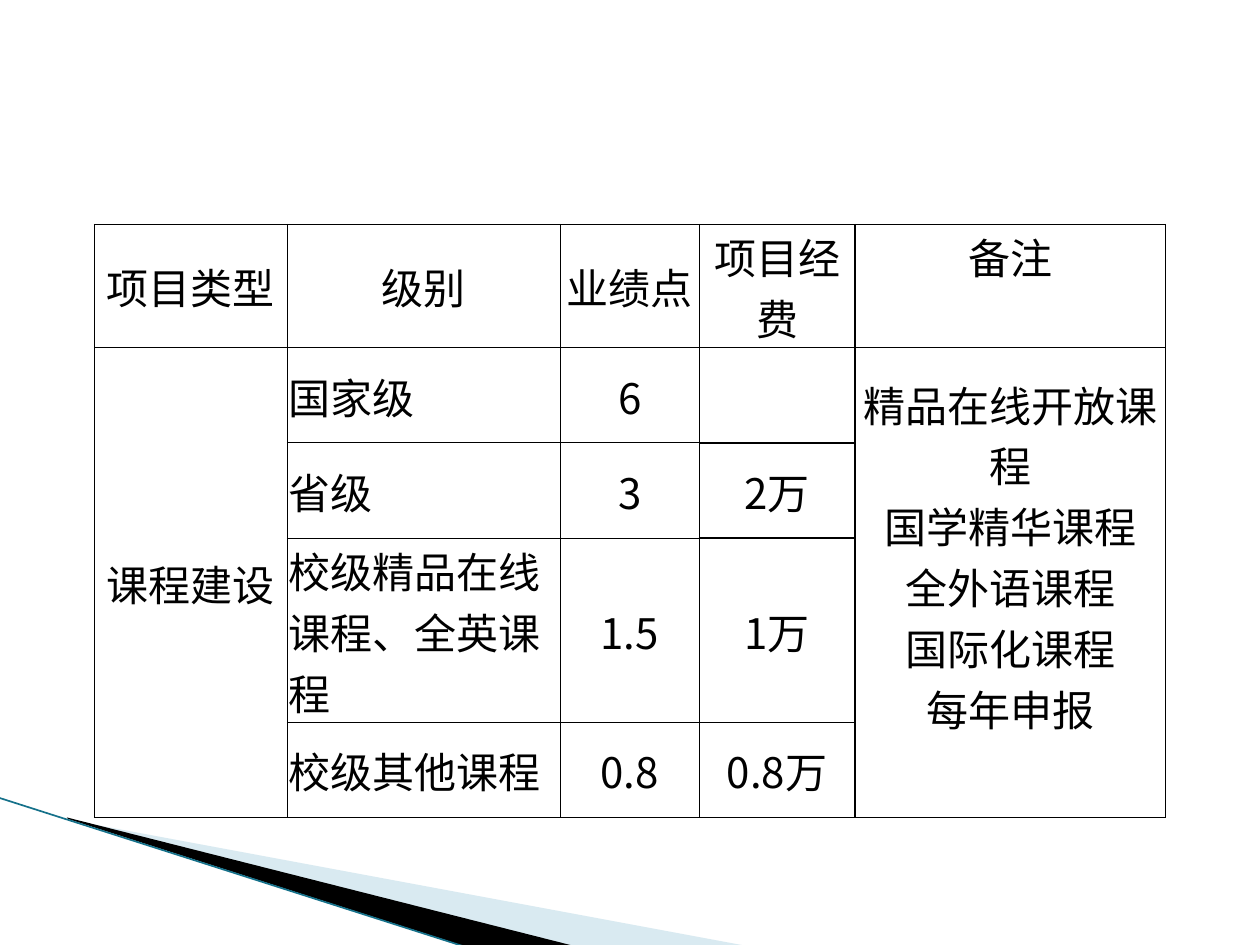
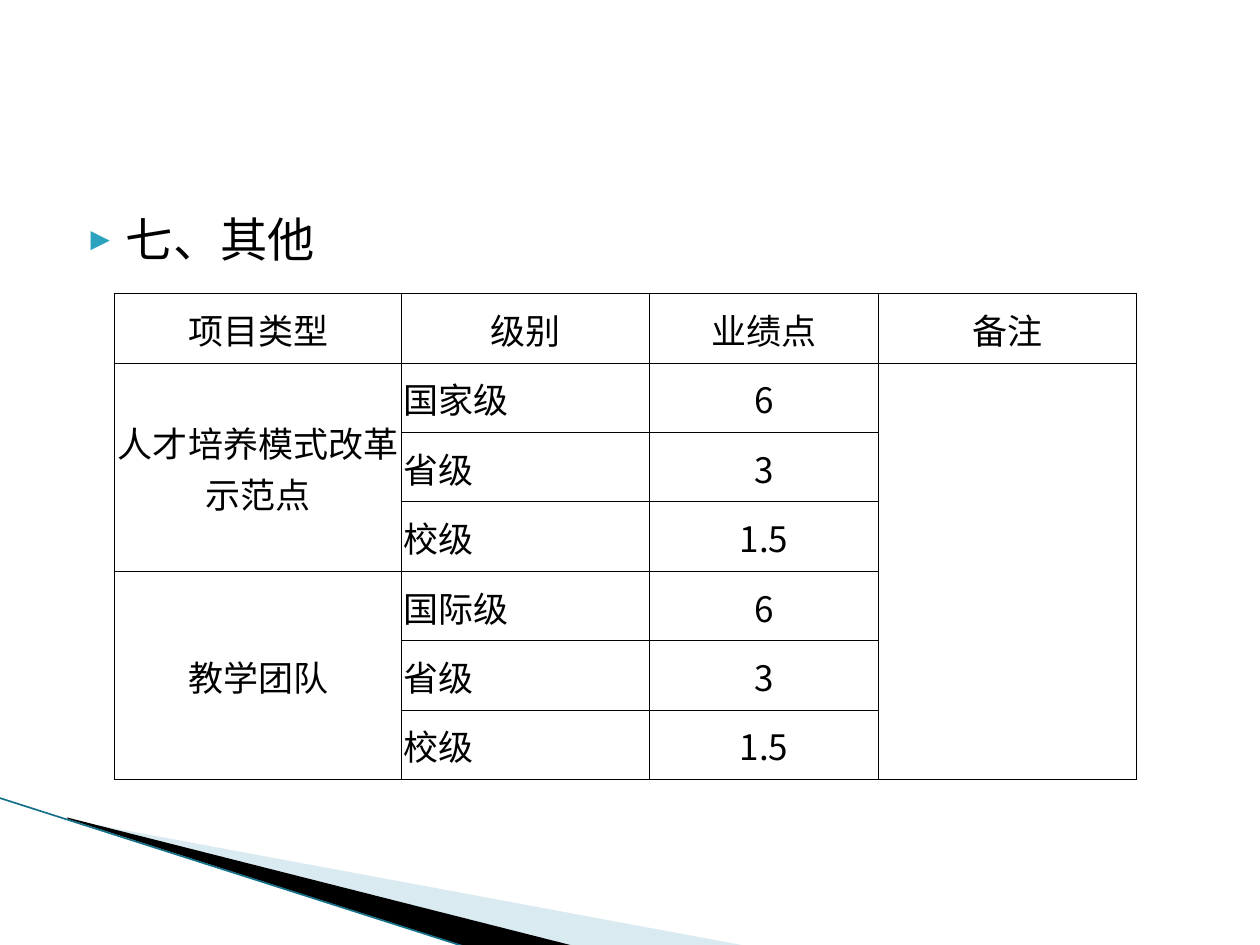
from lxml import etree
from pptx import Presentation
from pptx.dml.color import RGBColor
from pptx.enum.shapes import MSO_CONNECTOR
from pptx.enum.text import MSO_ANCHOR, PP_ALIGN
from pptx.oxml.ns import qn
from pptx.util import Cm, Pt

LEFT, CENTER = PP_ALIGN.LEFT, PP_ALIGN.CENTER
TOP, MIDDLE = MSO_ANCHOR.TOP, MSO_ANCHOR.MIDDLE
STRAIGHT = MSO_CONNECTOR.STRAIGHT

BLACK = "000000"
PALE_BLUE = "A0CBDC"
TEAL = "15718A"
BULLET_BLUE = "2DA2BF"
TABLE_FONT = "Noto Sans CJK SC"
BODY_FONT = "DejaVu Sans Mono"
THIN, THICK = 0.5, 1
LEVEL_COLUMN = 1

PALE_WEDGE = [(1.4, 16.53), (15.11, 19.08), (11.58, 19.08), (1.4, 16.51)]
BLACK_WEDGE = [(1.35, 16.48), (11.61, 19.08), (9.45, 19.1), (1.37, 16.51)]

COURSE_ROWS = [
    ["项目类型", "级别", "业绩点", "项目经费", "备注"],
    ["课程建设", "国家级", "6", "",
     "精品在线开放课程\n国学精华课程\n全外语课程\n国际化课程\n每年申报"],
    ["", "省级", "3", "2万", ""],
    ["", "校级精品在线课程、全英课程", "1.5", "1万", ""],
    ["", "校级其他课程", "0.8", "0.8万", ""],
]
OTHER_ROWS = [
    ["项目类型", "级别", "业绩点", "备注"],
    ["人才培养模式改革示范点", "国家级", "6", ""],
    ["", "省级", "3", ""],
    ["", "校级", "1.5", ""],
    ["教学团队", "国际级", "6", ""],
    ["", "省级", "3", ""],
    ["", "校级", "1.5", ""],
]


def color(value):
    return RGBColor.from_string(value)


def add_child(parent, tag, **attributes):
    return etree.SubElement(parent, qn(tag), attributes)


def add_run(paragraph, text, size, font_name):
    run = paragraph.add_run()
    run.text = text
    run.font.size = Pt(size)
    run.font.name = font_name
    run.font.color.rgb = color(BLACK)
    add_child(run.font._element, "a:ea", typeface=TABLE_FONT)


def add_wedge(slide, points, fill_color, opacity=100):
    corners = [(Cm(x), Cm(y)) for x, y in points]
    builder = slide.shapes.build_freeform(*corners[0])
    builder.add_line_segments(corners[1:], close=True)
    shape = builder.convert_to_shape()
    shape.shadow.inherit = False
    shape.line.fill.background()
    shape.fill.solid()
    shape.fill.fore_color.rgb = color(fill_color)
    if opacity < 100:
        fill = shape._element.spPr.find(qn("a:solidFill"))
        add_child(fill[0], "a:alpha", val=str(opacity * 1000))


def add_corner_band(slide):
    add_wedge(slide, PALE_WEDGE, PALE_BLUE, 40)
    add_wedge(slide, BLACK_WEDGE, BLACK)
    edge = slide.shapes.add_connector(
        STRAIGHT, Cm(-0.03), Cm(16.08), Cm(9.42), Cm(19.1))
    edge.line.color.rgb = color(TEAL)
    edge.line.width = Pt(0.95)
    add_child(edge._element.spPr, "a:effectLst")


def set_borders(cell, thick_edges):
    properties = cell._tc.get_or_add_tcPr()
    for edge in "LRTB":
        width = THICK if edge in thick_edges else THIN
        line = add_child(properties, f"a:ln{edge}", w=str(Pt(width)))
        fill = add_child(line, "a:solidFill")
        add_child(fill, "a:srgbClr", val=BLACK)


def fee_column_edges(row, column):
    if column == 4:
        return "L"
    if column != 3:
        return ""
    return "R" + ("T" if row > 1 else "") + ("B" if 0 < row < 4 else "")


def fill_cell(cell, text, size, alignment):
    cell.margin_left = cell.margin_right = cell.margin_top = Cm(0.03)
    cell.margin_bottom = 0
    cell.vertical_anchor = MIDDLE
    paragraph = cell.text_frame.paragraphs[0]
    paragraph.alignment = alignment
    for index, line in enumerate(text.split("\n") if text else []):
        if index:
            paragraph.add_line_break()
        add_run(paragraph, line, size, TABLE_FONT)
    cell.fill.background()


def add_points_table(slide, left, top, widths, heights, rows, merges, size,
                     thick_edges=lambda row, column: ""):
    frame = slide.shapes.add_table(
        len(rows), len(widths), Cm(left), Cm(top),
        Cm(sum(widths)), Cm(sum(heights)))
    table = frame.table
    table.first_row = table.horz_banding = False
    for column, width in zip(table.columns, widths):
        column.width = Cm(width)
    for row, height in zip(table.rows, heights):
        row.height = Cm(height)
    for row, texts in enumerate(rows):
        for column, text in enumerate(texts):
            cell = table.cell(row, column)
            alignment = LEFT if row and column == LEVEL_COLUMN else CENTER
            set_borders(cell, thick_edges(row, column))
            fill_cell(cell, text, size, alignment)
    for column, first, last in merges:
        table.cell(first, column).merge(table.cell(last, column))
    return table


def add_bullet_heading(slide, left, top, width, height, text):
    box = slide.shapes.add_textbox(Cm(left), Cm(top), Cm(width), Cm(height))
    box.text_frame.word_wrap = True
    paragraph = box.text_frame.paragraphs[0]
    properties = paragraph._p.get_or_add_pPr()
    properties.set("marL", str(Cm(1.02)))
    properties.set("indent", str(Cm(-0.71)))
    bullet_color = add_child(properties, "a:buClr")
    add_child(bullet_color, "a:srgbClr", val=BULLET_BLUE)
    add_child(properties, "a:buSzPct", val="68000")
    add_child(properties, "a:buFont", typeface=BODY_FONT)
    add_child(properties, "a:buChar", char="▶")
    add_run(paragraph, text, 27, BODY_FONT)


def add_slide(presentation):
    slide = presentation.slides.add_slide(presentation.slide_layouts[6])
    add_corner_band(slide)
    return slide


def build_course_slide(presentation):
    slide = add_slide(presentation)
    table = add_points_table(
        slide, 1.9, 4.52, [3.89, 5.51, 2.79, 3.15, 6.25],
        [2.48, 1.92, 1.92, 3.7, 1.92], COURSE_ROWS,
        [(0, 1, 4), (4, 1, 4)], 24, fee_column_edges)
    table.cell(0, 4).vertical_anchor = TOP
    table.cell(1, 4).margin_bottom = Cm(1.1)


def build_other_slide(presentation):
    slide = add_slide(presentation)
    add_bullet_heading(slide, 1.27, 4.11, 22.86, 12.57, "七、其他")
    add_points_table(
        slide, 2.31, 5.92, [5.79, 5, 4.6, 5.21], [1.4] * len(OTHER_ROWS),
        OTHER_ROWS, [(0, 1, 3), (0, 4, 6), (3, 1, 6)], 20)


def main():
    presentation = Presentation()
    presentation.slide_width = Cm(25.4)
    presentation.slide_height = Cm(19.05)
    build_course_slide(presentation)
    build_other_slide(presentation)
    presentation.save("out.pptx")


if __name__ == "__main__":
    main()
